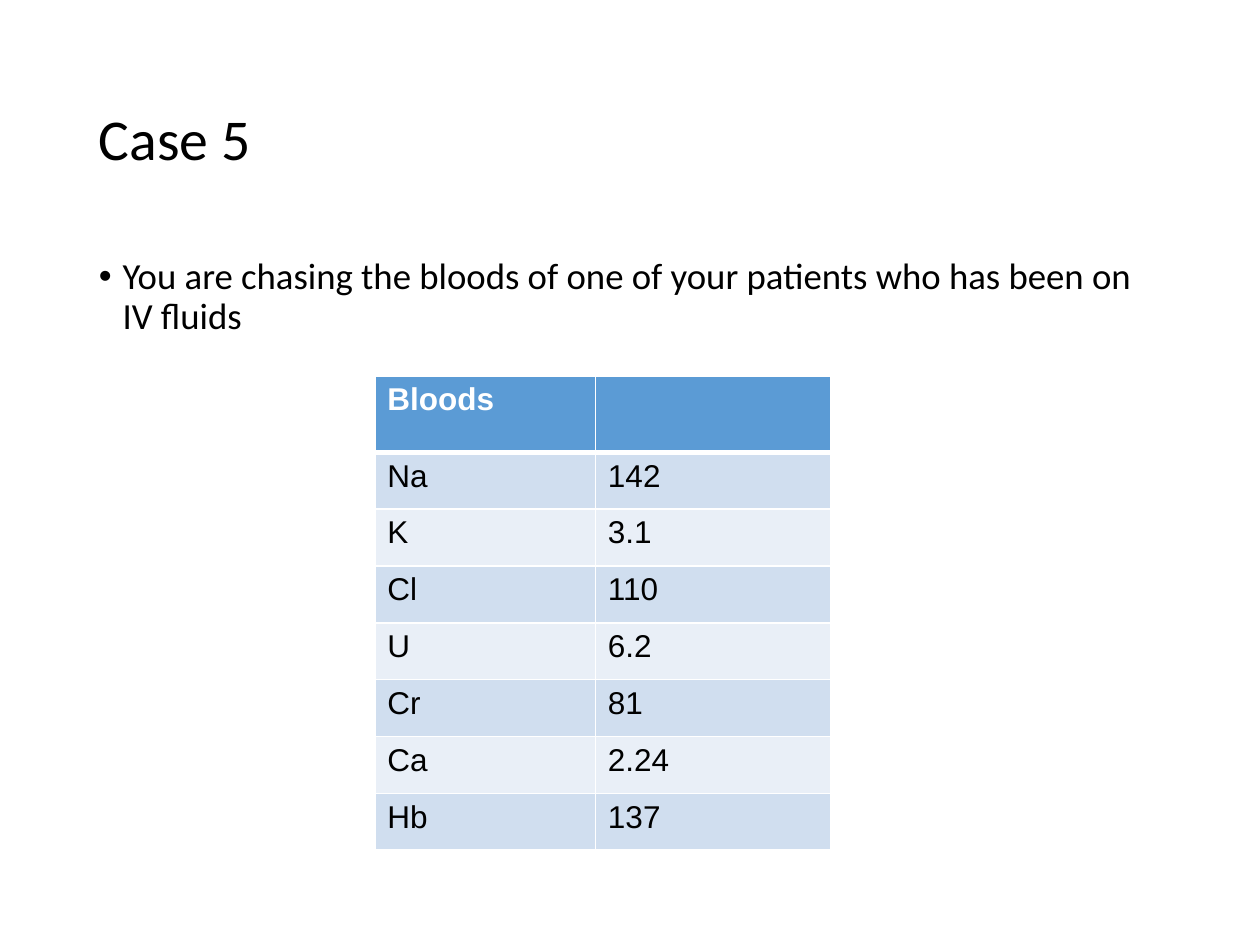
from lxml.etree import SubElement
from pptx import Presentation
from pptx.dml.color import RGBColor
from pptx.enum.text import MSO_ANCHOR as Anchor
from pptx.oxml.ns import qn
from pptx.util import Pt

BLOODS = [
    ("Bloods", ""),
    ("Na", "142"),
    ("K", "3.1"),
    ("Cl", "110"),
    ("U", "6.2"),
    ("Cr", "81"),
    ("Ca", "2.24"),
    ("Hb", "137"),
]
HEADER_FILL = "5B9BD5"
BAND_FILLS = ("E9EFF7", "D0DEEF")


def color(value):
    """Return the colour of a hex string."""
    return RGBColor.from_string(value)


def style_font(font, name, size, value, bold=False):
    """Set the face, size, colour and weight of a font."""
    font.name, font.size, font.bold = name, Pt(size), bold
    font.color.rgb = color(value)


def add_text(page, left, top, width, height, text, size, anchor):
    """Add a wrapped text box with one paragraph and return the paragraph."""
    box = page.shapes.add_textbox(Pt(left), Pt(top), Pt(width), Pt(height))
    frame = box.text_frame
    frame.word_wrap = True
    frame.vertical_anchor = anchor
    frame.text = text
    para = frame.paragraphs[0]
    para.line_spacing = 0.9
    style_font(para.runs[0].font, "Calibri", size, "000000")
    return para


def add_title(page, left, top, width, height):
    """Add the case title."""
    add_text(page, left, top, width, height, "Case 5", 33, Anchor.MIDDLE)


def add_scenario(page, left, top, width, height):
    """Add the bulleted description of the case."""
    text = "You are chasing the bloods of one of your patients who has been on IV fluids"
    para = add_text(page, left, top, width, height, text, 21, Anchor.TOP)
    props = para._p.get_or_add_pPr()
    props.set("marL", str(Pt(13.5)))
    props.set("indent", str(-Pt(13.5)))
    SubElement(props, qn("a:buFont"), typeface="Arial")
    SubElement(props, qn("a:buChar"), char="•")


def set_borders(cell, bottom, top):
    """Draw white cell borders with the given bottom and top widths."""
    props = cell._tc.get_or_add_tcPr()
    for side, width in (("L", 1), ("R", 1), ("T", top), ("B", bottom)):
        line = SubElement(props, qn(f"a:ln{side}"), w=str(Pt(width)))
        fill = SubElement(line, qn("a:solidFill"))
        SubElement(fill, qn("a:srgbClr"), val="FFFFFF")


def add_bloods(page, left, top, widths, header_height, row_height):
    """Add the table of blood results."""
    height = header_height + row_height * (len(BLOODS) - 1)
    table = page.shapes.add_table(
        len(BLOODS), len(widths), Pt(left), Pt(top), Pt(sum(widths)), Pt(height)
    ).table
    for column, width in zip(table.columns, widths):
        column.width = Pt(width)
    for index, values in enumerate(BLOODS):
        header = index == 0
        table.rows[index].height = Pt(header_height if header else row_height)
        for cell, value in zip(table.rows[index].cells, values):
            set_borders(cell, bottom=3 if header else 1, top=3 if index == 1 else 1)
            cell.fill.solid()
            cell.fill.fore_color.rgb = color(HEADER_FILL if header else BAND_FILLS[index % 2])
            cell.text_frame.text = value
            for span in cell.text_frame.paragraphs[0].runs:
                style_font(span.font, "Arial", 18, "FFFFFF" if header else "000000", header)


def main():
    """Build the slide and save the deck."""
    deck = Presentation()
    deck.slide_width, deck.slide_height = Pt(720), Pt(540)
    page = deck.slides.add_slide(deck.slide_layouts[6])
    add_title(page, 49.5, 28.75, 621, 104.38)
    add_scenario(page, 49.5, 143.75, 621, 342.62)
    add_bloods(page, 214.2, 214.8, (126, 134.4), 43.6, 32.5)
    deck.save("out.pptx")


if __name__ == "__main__":
    main()
